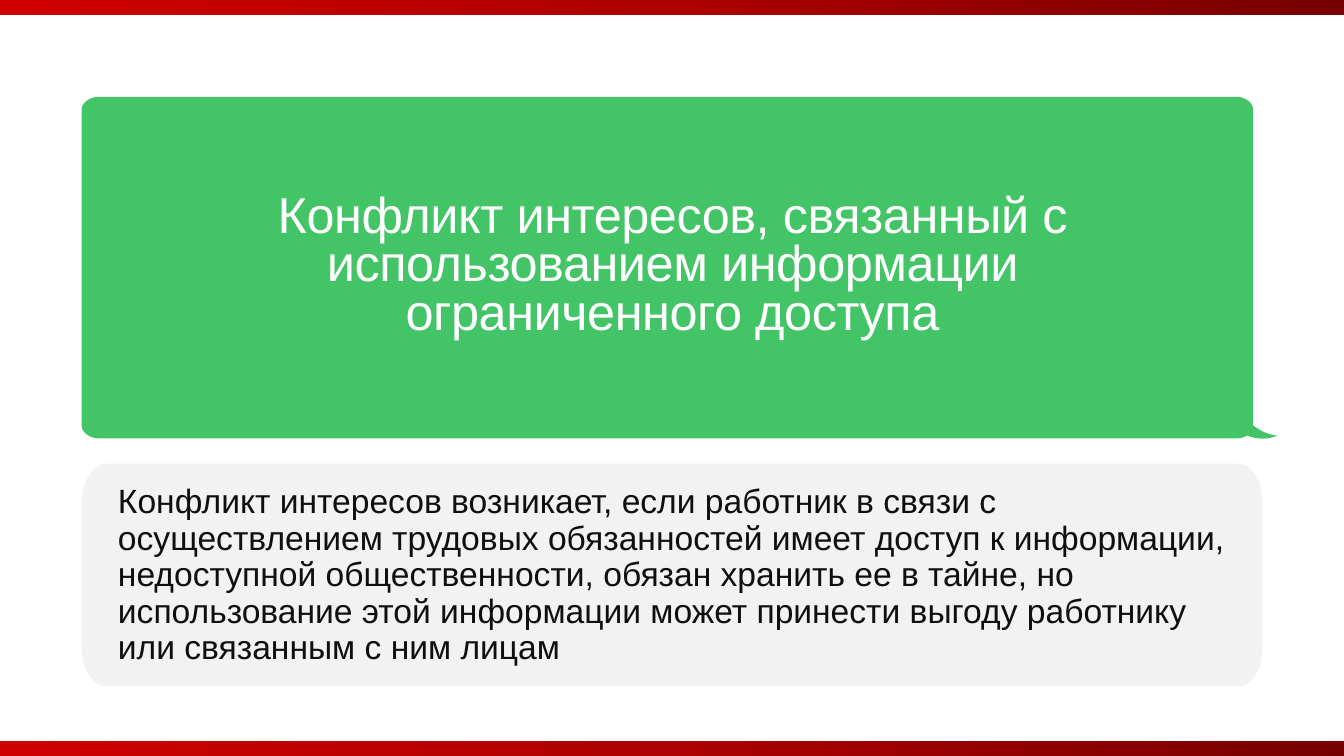
"""Builds a slide with a green speech bubble above a pale text panel."""
import copy

import pptx
import pptx.dml.color
import pptx.enum.shapes
import pptx.enum.text
import pptx.oxml
import pptx.oxml.ns
import pptx.util
from pptx.util import Inches, Pt

COLORS = {"green": "43C466", "ink": "100F0D", "white": "FFFFFF"}
REDS = [(0, "CE0000"), (0.5, "AD0000"), (1, "770000")]
BARS = [0, 7.35]
TITLE = "Конфликт интересов, связанный с использованием информации ограниченного доступа"
BODY = (
    "Конфликт интересов возникает, если работник в связи с осуществлением "
    "трудовых обязанностей имеет доступ к информации, недоступной общественности, "
    "обязан хранить ее в тайне, но использование этой информации может принести "
    "выгоду работнику или связанным с ним лицам"
)
BUBBLE = [
    (12.43, 4.22), (12.43, 1.09),
    (12.43, 1.02, 12.35, 0.96, 12.26, 0.96), (0.99, 0.96),
    (0.89, 0.96, 0.81, 1.02, 0.81, 1.09), (0.81, 4.22),
    (0.81, 4.29, 0.89, 4.35, 0.99, 4.35), (12.25, 4.35),
    (12.3, 4.35, 12.34, 4.34, 12.37, 4.32),
    (12.42, 4.34, 12.54, 4.38, 12.67, 4.32),
    (12.67, 4.32, 12.55, 4.32, 12.43, 4.22),
]
PANEL = [
    (12.27, 6.81), (1.06, 6.81),
    (0.93, 6.81, 0.81, 6.65, 0.81, 6.44), (0.81, 4.97),
    (0.81, 4.77, 0.93, 4.6, 1.06, 4.6), (12.27, 4.6),
    (12.41, 4.6, 12.52, 4.77, 12.52, 4.97), (12.52, 6.44),
    (12.52, 6.65, 12.41, 6.81, 12.27, 6.81),
]
STEPS = 12


def rgb(code):
    return pptx.dml.color.RGBColor.from_string(code)


def trace(parts):
    dots = []
    for part in parts:
        if len(part) == 2:
            dots.append(part)
            continue
        ends = [dots[-1], part[:2], part[2:4], part[4:]]
        for step in range(1, STEPS + 1):
            t = step / STEPS
            rates = [(1 - t) ** 3, 3 * t * (1 - t) ** 2, 3 * t * t * (1 - t), t ** 3]
            dots.append(tuple(sum(r * e[axis] for r, e in zip(rates, ends)) for axis in (0, 1)))
    return [(Inches(x), Inches(y)) for x, y in dots]


def add_form(slide, parts, color):
    dots = trace(parts)
    pen = slide.shapes.build_freeform(*dots[0])
    pen.add_line_segments(dots[1:], close=True)
    form = pen.convert_to_shape()
    form.shadow.inherit = False
    form.fill.solid()
    form.fill.fore_color.rgb = rgb(color)
    form.line.fill.background()
    return form


def add_text(slide, box, text, size, pitch, color, align):
    frame = slide.shapes.add_textbox(*map(Inches, box)).text_frame
    frame.word_wrap = True
    frame.margin_left = frame.margin_right = frame.margin_top = frame.margin_bottom = 0
    para = frame.paragraphs[0]
    para.text = text
    para.alignment = align
    para.line_spacing = Pt(pitch)
    para.font.size = Pt(size)
    para.font.name = "Arial"
    para.font.color.rgb = rgb(color)
    return para


def add_bar(slide, top):
    bar = slide.shapes.add_shape(
        pptx.enum.shapes.MSO_SHAPE.RECTANGLE, 0, Inches(top), Inches(13.33), Inches(0.15))
    bar.shadow.inherit = False
    bar.line.fill.background()
    bar.fill.gradient()
    bar.fill.gradient_angle = 0
    stops = bar._element.spPr.find(".//" + pptx.oxml.ns.qn("a:gsLst"))
    stops.append(copy.deepcopy(stops[0]))
    for stop, (place, color) in zip(bar.fill.gradient_stops, REDS):
        stop.position = place
        stop.color.rgb = rgb(color)


def main():
    deck = pptx.Presentation()
    deck.slide_width, deck.slide_height = Inches(13.33), Inches(7.5)
    slide = deck.slides.add_slide(deck.slide_layouts[6])
    align = pptx.enum.text.PP_ALIGN

    add_form(slide, BUBBLE, COLORS["green"])
    title = add_text(slide, (1.81, 1.93, 9.72, 1.47), TITLE, 36, 34.8, COLORS["white"], align.CENTER)
    title.runs[0].font._element.set("spc", "-30")

    panel = add_form(slide, PANEL, COLORS["ink"])
    tint = panel._element.spPr.find(".//" + pptx.oxml.ns.qn("a:srgbClr"))
    alpha = pptx.oxml.parse_xml(f'<a:alpha {pptx.oxml.ns.nsdecls("a")} val="5000"/>')
    tint.append(alpha)
    add_text(slide, (1.17, 4.8, 11.05, 1.82), BODY, 24, 26.1, COLORS["ink"], align.LEFT)

    for top in BARS:
        add_bar(slide, top)
    deck.save("out.pptx")


if __name__ == "__main__":
    main()
